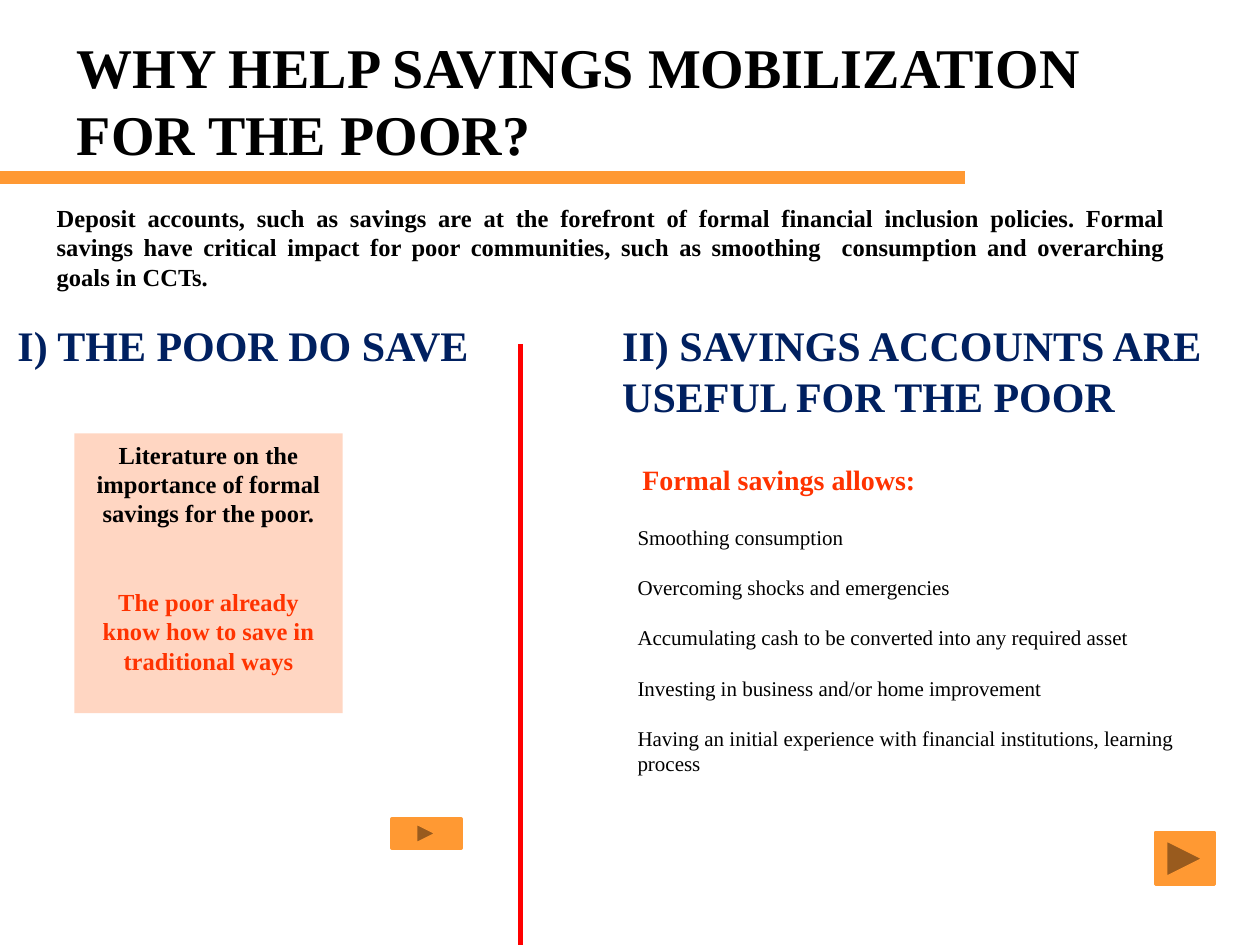
from dataclasses import dataclass

from lxml import etree
from pptx import Presentation
from pptx import util as u
from pptx.dml.color import RGBColor
from pptx.enum import shapes, text
from pptx.oxml.ns import qn


@dataclass(frozen=True)
class Theme:
    font: str = "Times New Roman"
    ink: str = "000000"
    heading: str = "002060"
    accent: str = "FF3300"
    orange: str = "FF9933"
    peach: str = "FFD6C2"
    divider: str = "FF0000"
    title_size: float = 32
    heading_size: float = 24
    lead_size: float = 16
    body_size: float = 14
    list_size: float = 12


THEME = Theme()
LEFT, CENTER, JUSTIFY = (
    text.PP_ALIGN.LEFT, text.PP_ALIGN.CENTER, text.PP_ALIGN.JUSTIFY)
BENEFITS = [
    "Smoothing consumption",
    "Overcoming shocks and emergencies",
    "Accumulating cash to be converted into any required asset",
    "Investing in business and/or home improvement",
    "Having an initial experience with financial institutions, learning process",
]


def rgb(value):
    return RGBColor.from_string(value)


def place(shape, area):
    for name, inches in zip(("left", "top", "width", "height"), area):
        setattr(shape, name, u.Inches(inches))


def remove_bullet(para):
    properties = para._p.get_or_add_pPr()
    properties.set("marL", "0")
    properties.set("indent", "0")
    etree.SubElement(properties, qn("a:buNone"))


def write(shape, lines, size, colors=(THEME.ink,), bold=True, align=LEFT, gap=0):
    """Fill a shape with paragraphs, cycling colors and parted by gap points."""
    frame = shape.text_frame
    settings = {"word_wrap": True, "auto_size": text.MSO_AUTO_SIZE.NONE,
                "vertical_anchor": text.MSO_ANCHOR.TOP}
    for name, value in settings.items():
        setattr(frame, name, value)
    for index, line in enumerate(lines):
        para = frame.add_paragraph() if index else frame.paragraphs[0]
        para.alignment = align
        para.space_before = u.Pt(gap if index else 0)
        if shape.is_placeholder:
            remove_bullet(para)
        span = para.add_run()
        span.text = line
        font_format = {"name": THEME.font, "size": u.Pt(size), "bold": bold}
        for name, value in font_format.items():
            setattr(span.font, name, value)
        span.font.color.rgb = rgb(colors[index % len(colors)])


def add_label(page, label, area, size, color):
    box = page.shapes.add_textbox(0, 0, 0, 0)
    place(box, area)
    write(box, [label], size, (color,))


def add_rule(page, start, end, color, width):
    rule = page.shapes.add_connector(
        shapes.MSO_CONNECTOR.STRAIGHT, *map(u.Inches, start + end))
    rule.line.color.rgb = rgb(color)
    rule.line.width = u.Pt(width)
    etree.SubElement(rule._element.spPr, qn("a:effectLst"))


def add_block(page, kind, area, fill):
    block = page.shapes.add_shape(kind, 0, 0, 0, 0)
    place(block, area)
    block.shadow.inherit = False
    block.fill.solid()
    block.fill.fore_color.rgb = rgb(fill)
    block.line.fill.background()
    return block


def add_next_button(page, area):
    button = add_block(
        page, shapes.MSO_SHAPE.ACTION_BUTTON_FORWARD_OR_NEXT, area, THEME.orange)
    button.line.color.rgb = rgb(THEME.orange)
    button.line.width = u.Pt(2)


def fill_placeholders(page):
    title, intro, benefits = page.placeholders
    place(title, (0.51, 0.21, 8.9, 1.18))
    write(title, ["WHY HELP SAVINGS MOBILIZATION FOR THE POOR?"], THEME.title_size)
    place(intro, (0.35, 1.56, 9, 0.9))
    write(intro, ["Deposit accounts, such as savings are at the forefront of formal "
                  "financial inclusion policies. Formal savings have critical impact "
                  "for poor communities, such as smoothing  consumption and "
                  "overarching goals in CCTs."], THEME.body_size, align=JUSTIFY)
    place(benefits, (4.96, 4.11, 4.57, 2.32))
    write(benefits, BENEFITS, THEME.list_size, bold=False, gap=14.4)


def main():
    deck = Presentation()
    deck.slide_width, deck.slide_height = u.Inches(10), u.Inches(7.5)
    page = deck.slides.add_slide(deck.slide_layouts.get_by_name("Two Content"))

    add_rule(page, (0, 1.41), (7.66, 1.41), THEME.orange, 7.25)
    fill_placeholders(page)

    add_label(page, "I) THE POOR DO SAVE", (0.04, 2.49, 5, 0.5),
              THEME.heading_size, THEME.heading)
    card = add_block(page, shapes.MSO_SHAPE.RECTANGLE, (0.59, 3.44, 2.13, 2.22),
                     THEME.peach)
    write(card, ["Literature on the importance of formal savings for the poor.",
                 "The poor already know how to save in traditional ways"],
          THEME.body_size, (THEME.ink, THEME.accent), align=CENTER, gap=33.6)

    add_rule(page, (4.13, 2.73), (4.13, 7.5), THEME.divider, 3)

    add_label(page, "II) SAVINGS ACCOUNTS ARE USEFUL FOR THE POOR",
              (4.84, 2.49, 4.96, 0.91), THEME.heading_size, THEME.heading)
    add_label(page, "Formal savings allows:", (5, 3.62, 3.34, 0.37),
              THEME.lead_size, THEME.accent)

    for area in ((3.11, 6.5, 0.55, 0.23), (9.17, 6.61, 0.47, 0.41)):
        add_next_button(page, area)

    deck.save("out.pptx")


if __name__ == "__main__":
    main()
